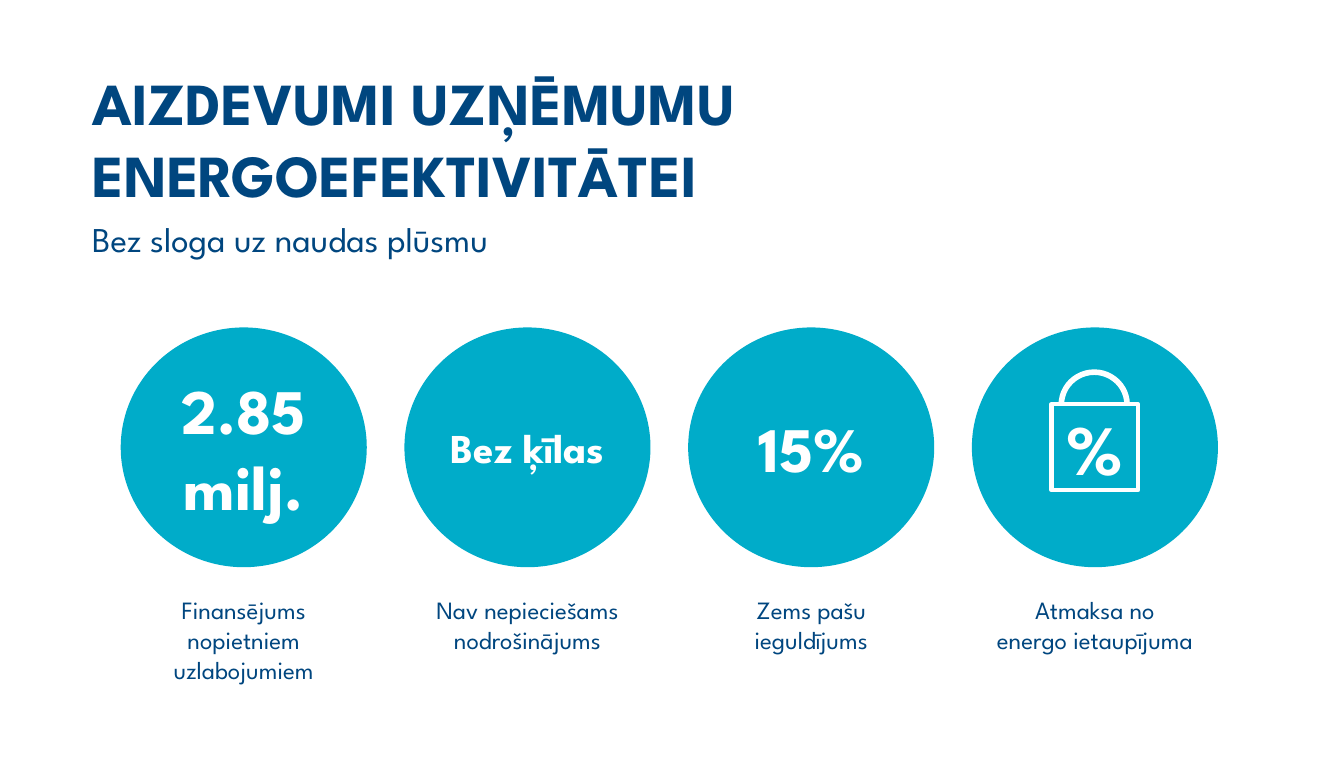
"""Build the slide on loans for the energy efficiency of companies."""
import dataclasses

import pptx
import pptx.dml.color
import pptx.enum.shapes
import pptx.enum.text
import pptx.shapes.autoshape
import pptx.shapes.shapetree
import pptx.slide
import pptx.text.text
import pptx.util

Cm = pptx.util.Cm
Pt = pptx.util.Pt
RGBColor = pptx.dml.color.RGBColor
MSO_SHAPE = pptx.enum.shapes.MSO_SHAPE
PP_ALIGN = pptx.enum.text.PP_ALIGN
MSO_ANCHOR = pptx.enum.text.MSO_ANCHOR


@dataclasses.dataclass(frozen=True)
class Theme:
    font: str = "League Spartan"
    navy: RGBColor = RGBColor(0x00, 0x46, 0x7F)
    teal: RGBColor = RGBColor(0x00, 0xAC, 0xC9)
    white: RGBColor = RGBColor(0xFF, 0xFF, 0xFF)
    heading: int = 48
    subheading: int = 28
    caption: int = 20
    figure: int = 51
    phrase: int = 33
    symbol: int = 57


@dataclasses.dataclass(frozen=True)
class Benefit:
    figure: tuple[str, ...]
    size: int
    caption: tuple[str, ...]


THEME = Theme()
BENEFITS = (
    Benefit(("2.85", "milj."), THEME.figure, ("Finansējums nopietniem uzlabojumiem",)),
    Benefit(("Bez ķīlas",), THEME.phrase, ("Nav nepieciešams nodrošinājums",)),
    Benefit(("15%",), THEME.figure, ("Zems pašu", "ieguldījums")),
    Benefit(("%",), THEME.symbol, ("Atmaksa no", "energo ietaupījuma")),
)
FIRST_LEFT, PITCH = 3.43, 8.06
CIRCLE_TOP, CIRCLE_WIDTH, CIRCLE_HEIGHT = 9.3, 6.99, 6.81
CAPTION_TOP, CAPTION_HEIGHT = 16.74, 2.84


def prepare_frame(frame: pptx.text.text.TextFrame, anchor: MSO_ANCHOR) -> None:
    frame.word_wrap = True
    frame.auto_size = pptx.enum.text.MSO_AUTO_SIZE.NONE
    frame.vertical_anchor = anchor
    frame.margin_left = frame.margin_right = Cm(0.28)
    frame.margin_top = frame.margin_bottom = Cm(0.15)


def write(paragraph: pptx.text.text._Paragraph, text: str, *, size: int,
          color: RGBColor, bold: bool = False,
          align: PP_ALIGN = PP_ALIGN.CENTER, before: float = 0) -> None:
    paragraph.alignment = align
    if before:
        paragraph.space_before = Pt(before)
    run = paragraph.add_run()
    run.text = text
    run.font.name = THEME.font
    run.font.size = Pt(size)
    run.font.bold = bold
    run.font.color.rgb = color


def write_lines(frame: pptx.text.text.TextFrame, lines: tuple[str, ...], *,
                size: int, color: RGBColor, bold: bool = False) -> None:
    for index, line in enumerate(lines):
        paragraph = frame.add_paragraph() if index else frame.paragraphs[0]
        write(paragraph, line, size=size, color=color, bold=bold)


def add_filled(shapes: pptx.shapes.shapetree._BaseGroupShapes, kind: MSO_SHAPE,
               left: float, top: float, width: float, height: float,
               color: RGBColor) -> pptx.shapes.autoshape.Shape:
    shape = shapes.add_shape(kind, Cm(left), Cm(top), Cm(width), Cm(height))
    shape.shadow.inherit = False
    shape.fill.solid()
    shape.fill.fore_color.rgb = color
    shape.line.fill.background()
    return shape


def add_heading(slide: pptx.slide.Slide) -> None:
    title = slide.shapes.title
    title.left, title.top = Cm(2.34), Cm(1.73)
    title.width, title.height = Cm(28), Cm(5.84)
    frame = title.text_frame
    prepare_frame(frame, MSO_ANCHOR.TOP)
    write(frame.paragraphs[0], "AIZDEVUMI UZŅĒMUMU ENERGOEFEKTIVITĀTEI",
          size=THEME.heading, color=THEME.navy, bold=True, align=PP_ALIGN.LEFT)
    write(frame.add_paragraph(), "Bez sloga uz naudas plūsmu",
          size=THEME.subheading, color=THEME.navy, align=PP_ALIGN.LEFT, before=6.8)


def add_benefit(slide: pptx.slide.Slide, benefit: Benefit, left: float) -> None:
    circle = add_filled(slide.shapes, MSO_SHAPE.OVAL, left, CIRCLE_TOP,
                        CIRCLE_WIDTH, CIRCLE_HEIGHT, THEME.teal)
    prepare_frame(circle.text_frame, MSO_ANCHOR.MIDDLE)
    write_lines(circle.text_frame, benefit.figure, size=benefit.size,
                color=THEME.white, bold=True)
    caption = slide.shapes.add_textbox(Cm(left), Cm(CAPTION_TOP),
                                       Cm(CIRCLE_WIDTH), Cm(CAPTION_HEIGHT))
    prepare_frame(caption.text_frame, MSO_ANCHOR.TOP)
    write_lines(caption.text_frame, benefit.caption, size=THEME.caption,
                color=THEME.navy)


def add_bag(slide: pptx.slide.Slide) -> None:
    bag = slide.shapes.add_group_shape().shapes
    body = add_filled(bag, MSO_SHAPE.RECTANGLE, 29.87, 11.48, 2.46, 2.44, THEME.teal)
    body.fill.background()
    body.line.color.rgb = THEME.white
    body.line.width = Pt(3.5)
    handle = add_filled(bag, MSO_SHAPE.BLOCK_ARC, 30.07, 10.49, 2.03, 2.01, THEME.white)
    for index, value in enumerate((108, 215.49, 0.08)):
        handle.adjustments[index] = value


def main() -> None:
    presentation = pptx.Presentation()
    presentation.slide_width, presentation.slide_height = Cm(38.18), Cm(21.84)
    slide = presentation.slides.add_slide(presentation.slide_layouts.get_by_name("Title Only"))
    add_heading(slide)
    for index, benefit in enumerate(BENEFITS):
        add_benefit(slide, benefit, FIRST_LEFT + index * PITCH)
    add_bag(slide)
    presentation.save("out.pptx")


if __name__ == "__main__":
    main()
